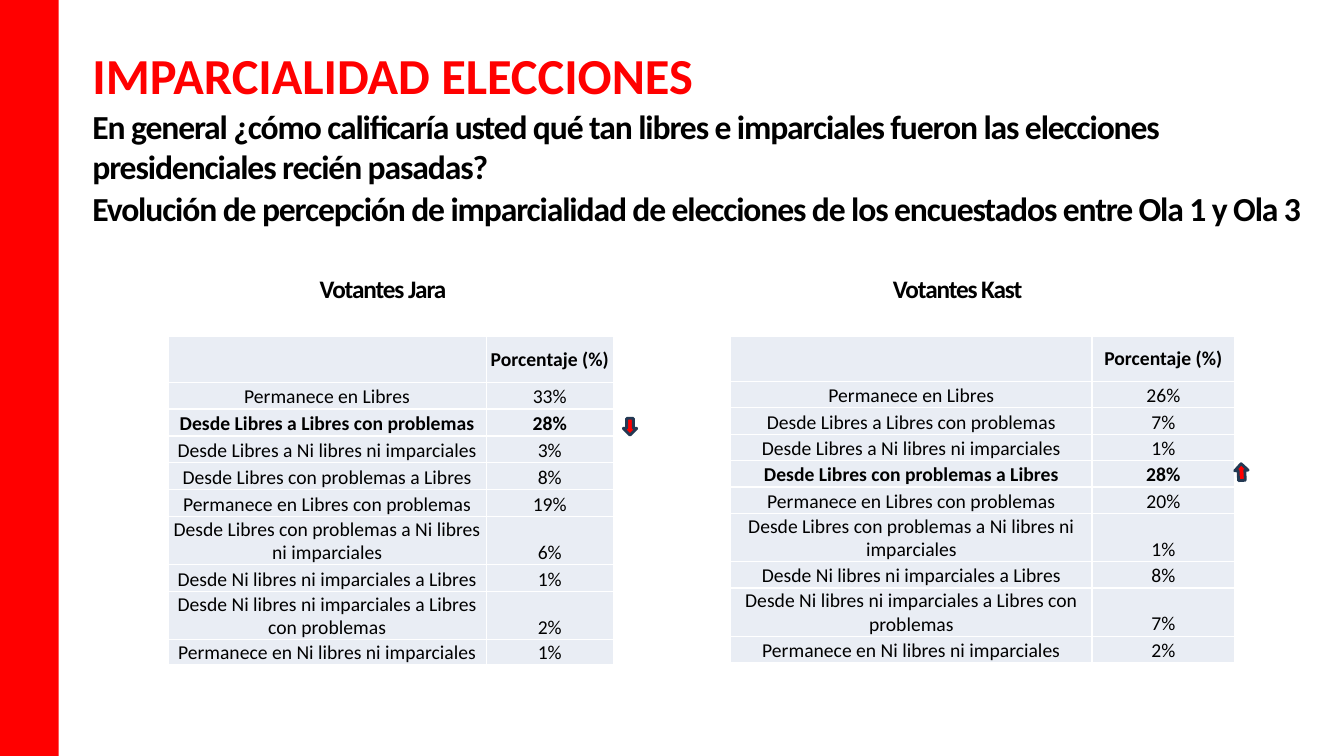
from lxml import etree
from pptx import Presentation, util as u
from pptx.dml.color import RGBColor
from pptx.enum import shapes, text
from pptx.oxml import ns

COLS, ROWS = 160, 90
WIDTH, HEIGHT = u.Inches(13.33), u.Inches(7.5)
RED, BLACK, WHITE, PALE, NAVY = "FF0000", "000000", "FFFFFF", "E9EDF4", "233953"

TRANSITIONS = [
    "Permanece en Libres",
    "Desde Libres a Libres con problemas",
    "Desde Libres a Ni libres ni imparciales",
    "Desde Libres con problemas a Libres",
    "Permanece en Libres con problemas",
    "Desde Libres con problemas a Ni libres ni imparciales",
    "Desde Ni libres ni imparciales a Libres",
    "Desde Ni libres ni imparciales a Libres con problemas",
    "Permanece en Ni libres ni imparciales",
]
JARA = [33, 28, 3, 8, 19, 6, 1, 2, 1]
KAST = [26, 7, 1, 28, 20, 1, 8, 7, 2]


def x(cols):
    """Return the length of a number of grid columns."""
    return round(WIDTH * cols / COLS)


def y(rows):
    """Return the length of a number of grid rows."""
    return round(HEIGHT * rows / ROWS)


def box(left, top, width, height):
    """Return a grid rectangle as slide lengths."""
    return x(left), y(top), x(width), y(height)


def rgb(value):
    """Return the colour for a hex string."""
    return RGBColor.from_string(value)


def add_run(p, words, size, color=BLACK, bold=True, spacing=0):
    """Add one formatted run to a paragraph."""
    r = p.add_run()
    r.text = words
    r.font.name, r.font.size, r.font.bold = "Calibri", u.Pt(size), bold
    r.font.color.rgb = rgb(color)
    if spacing:
        r._r.get_or_add_rPr().set("spc", str(spacing))


def add_shape(s, kind, place, fill, line=None, rotation=0):
    """Add a filled preset shape with an optional outline."""
    sp = s.shapes.add_shape(kind, *box(*place))
    sp.shadow.inherit = False
    sp.rotation = rotation
    sp.fill.solid()
    sp.fill.fore_color.rgb = rgb(fill)
    if line:
        sp.line.color.rgb = rgb(line)
        sp.line.width = u.Pt(2)
    else:
        sp.line.fill.background()


def add_heading(s):
    """Add the title, the question and the subtitle."""
    tf = s.shapes.add_textbox(*box(11, 5, 149, 22.3)).text_frame
    tf.word_wrap = True
    tf.margin_left = tf.margin_right = tf.margin_bottom = 0
    tf.margin_top = u.Inches(0.02)
    lines = [
        ("IMPARCIALIDAD ELECCIONES", 36, RED, 0),
        ("En general ¿cómo calificaría usted qué tan libres e imparciales "
         "fueron las elecciones presidenciales recién pasadas?", 24, BLACK, -80),
        ("Evolución de percepción de imparcialidad de elecciones de los "
         "encuestados entre Ola 1 y Ola 3", 24, BLACK, -80),
    ]
    for i, (words, size, color, spacing) in enumerate(lines):
        p = tf.add_paragraph() if i else tf.paragraphs[0]
        if i:
            p.space_before = u.Pt(1)
        add_run(p, words, size, color, spacing=spacing)


def add_caption(s, words, left, top):
    """Add a centred caption above a table."""
    tf = s.shapes.add_textbox(*box(left, top, 36, 4.8)).text_frame
    tf.word_wrap = True
    p = tf.paragraphs[0]
    p.alignment = text.PP_ALIGN.CENTER
    add_run(p, words, 18, spacing=-80)


def style_cell(cell, words, bold, anchor):
    """Write a centred table cell with white borders and a pale fill."""
    props = cell._tc.get_or_add_tcPr()
    for side in ("a:lnL", "a:lnR", "a:lnT", "a:lnB"):
        ln = etree.SubElement(props, ns.qn(side), w=str(u.Pt(1)))
        fill = etree.SubElement(ln, ns.qn("a:solidFill"))
        etree.SubElement(fill, ns.qn("a:srgbClr"), val=WHITE)
    cell.fill.solid()
    cell.fill.fore_color.rgb = rgb(PALE)
    cell.margin_left = cell.margin_right = cell.margin_top = u.Inches(0.01)
    cell.margin_bottom = 0
    cell.vertical_anchor = anchor
    p = cell.text_frame.paragraphs[0]
    p.alignment = text.PP_ALIGN.CENTER
    if words:
        add_run(p, words, 14, bold=bold)


def add_results(s, left, widths, heights, values):
    """Add a table of transitions with the largest change in bold."""
    rows = [("", "Porcentaje (%)")]
    rows += [(name, f"{value}%") for name, value in zip(TRANSITIONS, values)]
    place = box(left, 40, sum(widths), sum(heights))
    table = s.shapes.add_table(len(rows), 2, *place).table
    table.first_row = table.horz_banding = False
    for column, width in zip(table.columns, widths):
        column.width = x(width)
    for i, (row, height) in enumerate(zip(rows, heights)):
        table.rows[i].height = y(height)
        anchor = text.MSO_ANCHOR.BOTTOM if i else text.MSO_ANCHOR.MIDDLE
        for j, words in enumerate(row):
            bold = i == 0 or values[i - 1] == 28
            style_cell(table.cell(i, j), words, bold, anchor)


def main():
    """Build and save the slide."""
    prs = Presentation()
    prs.slide_width, prs.slide_height = WIDTH, HEIGHT
    s = prs.slides.add_slide(prs.slide_layouts[6])
    arrow = shapes.MSO_SHAPE.DOWN_ARROW
    add_shape(s, shapes.MSO_SHAPE.RECTANGLE, (0, 0, 7, ROWS), RED)
    add_heading(s)
    add_results(s, 20, (37.9, 15.1), [5.5] + [3.2] * 8 + [0.5], JARA)
    add_results(s, 87, (43, 17), [5.4] + [3.15] * 9, KAST)
    add_caption(s, "Votantes Jara", 27.6, 31.9)
    add_caption(s, "Votantes Kast", 96, 32)
    add_shape(s, arrow, (74.2, 49.8, 1.6, 2), RED, NAVY)
    add_shape(s, arrow, (147, 55.2, 1.6, 2), RED, NAVY, 177.1)
    prs.save("out.pptx")


if __name__ == "__main__":
    main()
